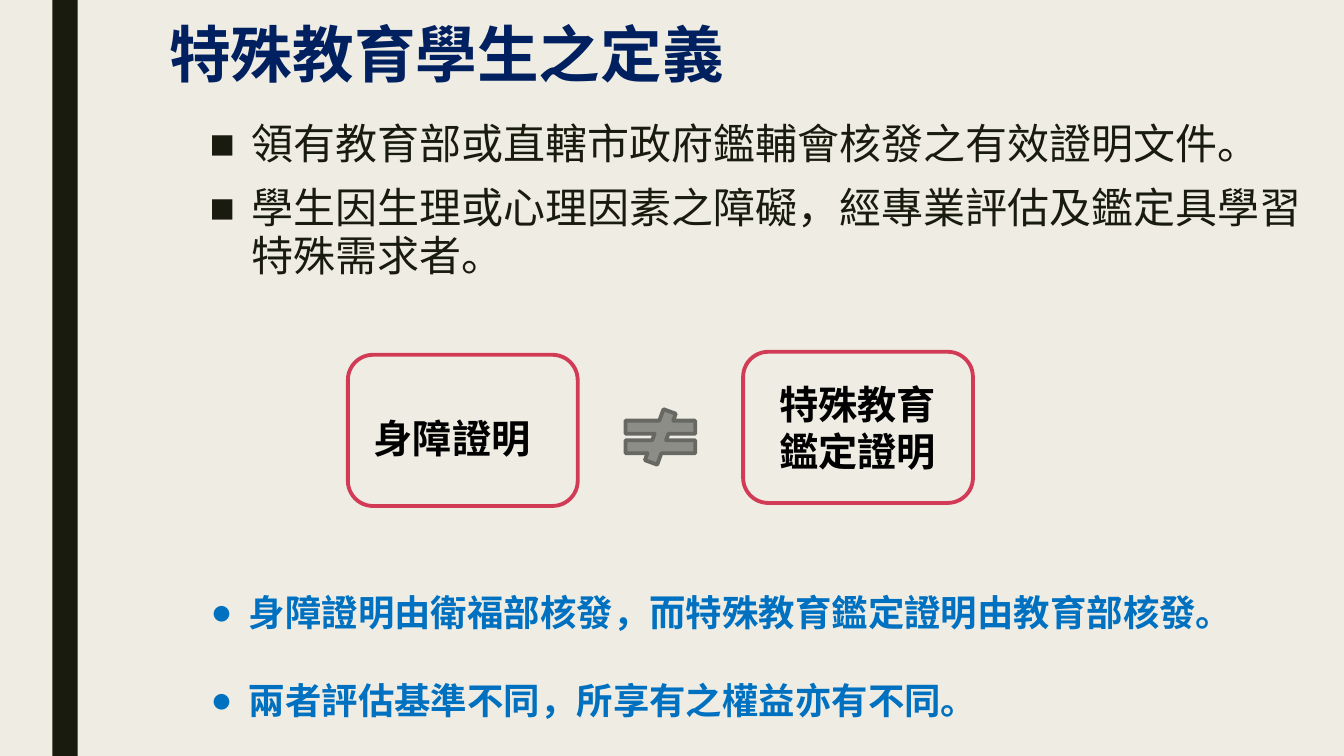
from lxml import etree
from pptx import Presentation, util as u
from pptx.dml.color import RGBColor
from pptx.enum import shapes, text
from pptx.oxml.ns import qn

WIDTH, HEIGHT = 13.33, 7.5
CREAM = RGBColor(0xEF, 0xED, 0xE3)
DARK = RGBColor(0x19, 0x1B, 0x0E)
NAVY = RGBColor(0x00, 0x20, 0x60)
BLUE = RGBColor(0x00, 0x70, 0xC0)
BLACK = RGBColor(0x00, 0x00, 0x00)
CRIMSON = RGBColor(0xD1, 0x3B, 0x56)
GREY = RGBColor(0x8C, 0x8D, 0x86)
DARK_GREY = RGBColor(0x68, 0x68, 0x63)
LATIN, CJK = "Karla", "Noto Sans CJK SC"


def add_figure(page, kind, place, fill=None, line=None):
    """Add a preset shape with an optional fill and outline."""
    figure = page.shapes.add_shape(kind, *map(u.Inches, place))
    figure.shadow.inherit = False
    if fill is None:
        figure.fill.background()
    else:
        figure.fill.solid()
        figure.fill.fore_color.rgb = fill
    if line is None:
        figure.line.fill.background()
    else:
        figure.line.color.rgb = line
        figure.line.width = u.Pt(2.75)
    return figure


def add_bullet(para, symbol, indent):
    """Give a paragraph a hanging bullet."""
    properties = para._p.get_or_add_pPr()
    properties.set("marL", str(u.Inches(indent)))
    properties.set("indent", str(-u.Inches(indent)))
    etree.SubElement(properties, qn("a:buFont")).set("typeface", "Arial")
    etree.SubElement(properties, qn("a:buChar")).set("char", symbol)


def add_text(page, place, lines, size, font, color, bold=True, spacing=None,
             before=0, after=0, bullet=None, indent=0):
    """Add a wrapped text box with one paragraph per line."""
    box = page.shapes.add_textbox(*map(u.Inches, place))
    frame = box.text_frame
    frame.word_wrap = True
    frame.vertical_anchor = text.MSO_ANCHOR.TOP
    for number, line in enumerate(lines):
        para = frame.add_paragraph() if number else frame.paragraphs[0]
        para.line_spacing = spacing
        para.space_before = u.Pt(before if number else 0)
        para.space_after = u.Pt(after)
        if bullet:
            add_bullet(para, bullet, indent)
        span = para.add_run()
        span.text = line
        span.font.name = font
        span.font.size = u.Pt(size)
        span.font.bold = bold
        span.font.color.rgb = color


def add_certificate(page, left, top, lines, text_place):
    """Add an outlined certificate card and its label."""
    add_figure(page, shapes.MSO_SHAPE.ROUNDED_RECTANGLE,
               (left, top, 2.28, 1.5), line=CRIMSON)
    add_text(page, text_place, lines, 28, CJK, BLACK)


def main():
    """Build the slide and save it."""
    deck = Presentation()
    deck.slide_width, deck.slide_height = u.Inches(WIDTH), u.Inches(HEIGHT)
    page = deck.slides.add_slide(deck.slide_layouts[6])
    page.background.fill.solid()
    page.background.fill.fore_color.rgb = CREAM

    add_figure(page, shapes.MSO_SHAPE.RECTANGLE, (0.52, 0, 0.25, HEIGHT), DARK)
    add_text(page, (1.58, 0.2, 9, 1.17), ["特殊教育學生之定義"],
             44, LATIN, NAVY, spacing=0.89)
    add_text(page, (1.98, 1.16, 11.07, 2.51),
             ["領有教育部或直轄市政府鑑輔會核發之有效證明文件。",
              "學生因生理或心理因素之障礙，經專業評估及鑑定具學習特殊需求者。"],
             30, LATIN, DARK, bold=False, spacing=0.94, before=10, after=2,
             bullet="■", indent=0.42)
    add_certificate(page, 3.45, 3.52, ["身障證明"], (3.61, 4.06, 1.97, 0.57))
    add_figure(page, shapes.MSO_SHAPE.MATH_NOT_EQUAL,
               (6.08, 4.06, 0.94, 0.55), GREY, DARK_GREY)
    add_certificate(page, 7.37, 3.49, ["特殊教育", "鑑定證明"],
                    (7.63, 3.72, 2.08, 1.04))
    add_text(page, (1.99, 5.81, 10.76, 1.42),
             ["身障證明由衛福部核發，而特殊教育鑑定證明由教育部核發。",
              "兩者評估基準不同，所享有之權益亦有不同。"],
             26, CJK, BLUE, before=31, bullet="●", indent=0.38)
    deck.save("out.pptx")


if __name__ == "__main__":
    main()
